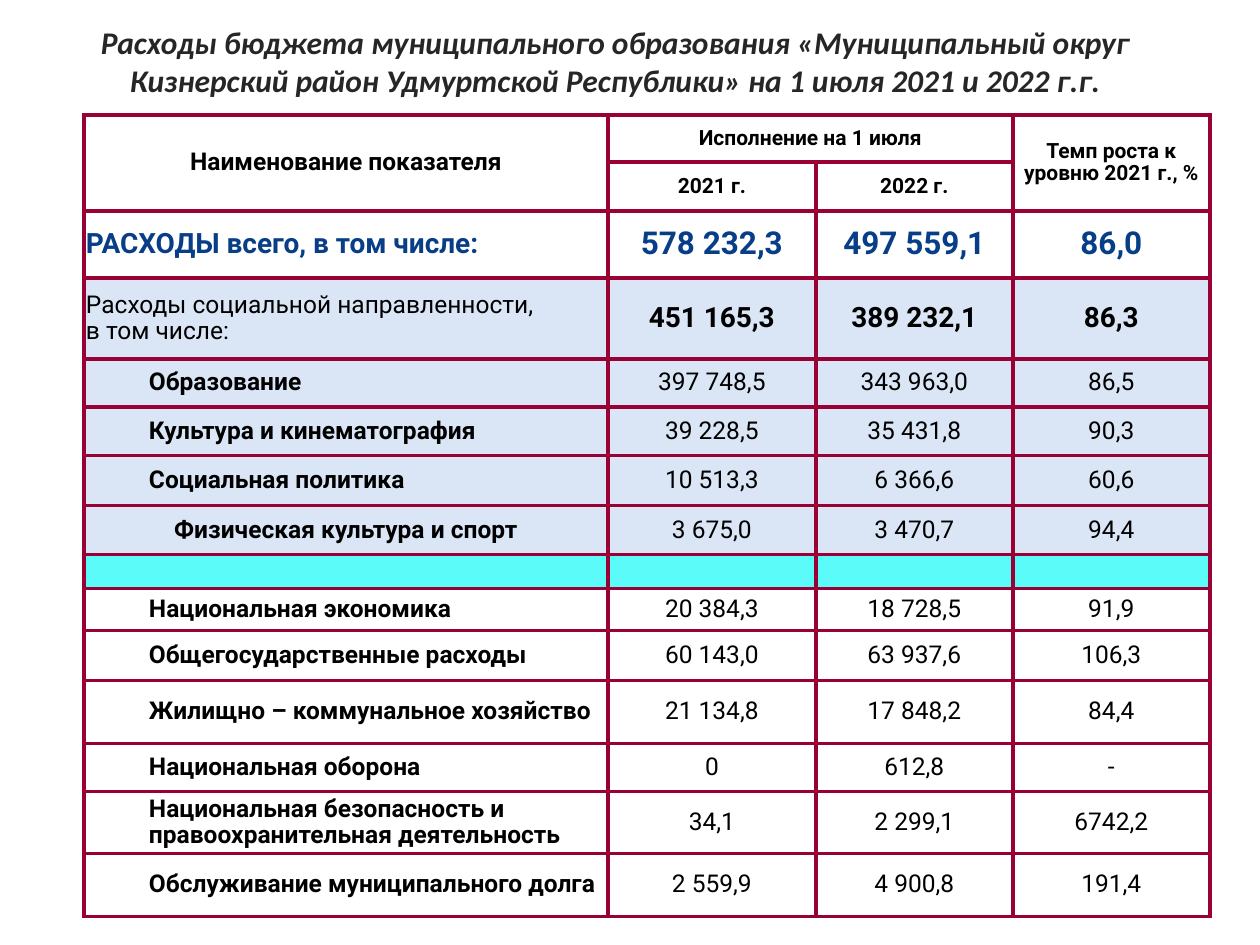
from dataclasses import dataclass

from lxml import etree
from pptx import Presentation
from pptx.dml.color import RGBColor
from pptx.enum.text import MSO_ANCHOR, MSO_AUTO_SIZE, PP_ALIGN
from pptx.oxml.ns import qn
from pptx.util import Pt

LEFT, CENTER = PP_ALIGN.LEFT, PP_ALIGN.CENTER
TOP, MIDDLE = MSO_ANCHOR.TOP, MSO_ANCHOR.MIDDLE
PX = 914400 // 126
TITLE_ONLY = 5


@dataclass(frozen=True)
class Theme:
    title_font: str = "Calibri"
    table_font: str = "Roboto"
    ink: str = "000000"
    title: str = "262626"
    total: str = "073E87"
    border: str = "990033"
    plain: str = "FFFFFF"
    social: str = "DAE6F6"
    divider: str = "5AFBF8"
    small: int = 12
    body: int = 14
    strong: int = 16
    large: int = 18
    border_width: float = 2.25


theme = Theme()


def write(frame, text, *, size=theme.body, color=theme.ink, font=theme.table_font,
          bold=False, italic=False, align=CENTER, indent=0, spacing=0.9):
    """Fill a text frame, one paragraph per line of text."""
    for index, line in enumerate(text.split("\n")):
        para = frame.paragraphs[0] if index == 0 else frame.add_paragraph()
        para.alignment = align
        para.line_spacing = spacing
        if indent:
            para.level = 1
            properties = para._p.get_or_add_pPr()
            properties.set("marL", str(indent * PX))
            properties.set("indent", "0")
        span = para.add_run()
        span.text = line
        span.font.name = font
        span.font.size = Pt(size)
        span.font.bold = bold
        span.font.italic = italic
        span.font.color.rgb = RGBColor.from_string(color)


def style_cell(cell, fill):
    """Set the cell's insets, borders and fill."""
    cell.margin_left = cell.margin_right = 2 * PX
    cell.margin_top = cell.margin_bottom = 2 * PX
    cell.vertical_anchor = MIDDLE
    properties = cell._tc.get_or_add_tcPr()
    for side in ("lnL", "lnR", "lnT", "lnB"):
        line = etree.SubElement(properties, qn(f"a:{side}"), w=str(Pt(theme.border_width)))
        solid = etree.SubElement(line, qn("a:solidFill"))
        etree.SubElement(solid, qn("a:srgbClr"), val=theme.border)
    cell.fill.solid()
    cell.fill.fore_color.rgb = RGBColor.from_string(fill)


deck = Presentation()
deck.slide_width, deck.slide_height = 1260 * PX, 945 * PX
page = deck.slides.add_slide(deck.slide_layouts[TITLE_ONLY])

# Title
title = page.shapes.title
title.left, title.top, title.width, title.height = 20 * PX, 17 * PX, 1191 * PX, 89 * PX
title.text_frame.auto_size = MSO_AUTO_SIZE.NONE
title.text_frame.vertical_anchor = TOP
title.text_frame.word_wrap = True
write(title.text_frame,
      "Расходы бюджета муниципального образования «Муниципальный округ "
      "Кизнерский район Удмуртской Республики» на 1 июля 2021 и 2022 г.г.",
      size=theme.large, color=theme.title, font=theme.title_font,
      bold=True, italic=True, spacing=1.0)

# Table contents: header cells, then rows of height, fill, name and figures
header_heights = [47, 49]
header_cells = [
    (0, 0, "Наименование показателя", theme.body),
    (0, 1, "Исполнение на 1 июля", theme.small),
    (0, 3, "Темп роста к уровню 2021 г., %", theme.small),
    (1, 1, "2021 г.", theme.small),
    (1, 2, "2022 г.", theme.small),
]
TOTAL = "РАСХОДЫ всего, в том числе:"
SOCIAL = "Расходы социальной направленности,\nв том числе:"
SPORT = "Физическая культура и спорт"
budget_rows = [
    (67, theme.plain, TOTAL, "578 232,3", "497 559,1", "86,0"),
    (81, theme.social, SOCIAL, "451 165,3", "389 232,1", "86,3"),
    (48, theme.social, "Образование", "397 748,5", "343 963,0", "86,5"),
    (49, theme.social, "Культура и кинематография", "39 228,5", "35 431,8", "90,3"),
    (50, theme.social, "Социальная политика", "10 513,3", "6 366,6", "60,6"),
    (49, theme.social, SPORT, "3 675,0", "3 470,7", "94,4"),
    (34, theme.divider, "", "", "", ""),
    (42, theme.plain, "Национальная экономика", "20 384,3", "18 728,5", "91,9"),
    (50, theme.plain, "Общегосударственные расходы", "60 143,0", "63 937,6", "106,3"),
    (63, theme.plain, "Жилищно – коммунальное хозяйство", "21 134,8", "17 848,2", "84,4"),
    (48, theme.plain, "Национальная оборона", "0", "612,8", "-"),
    (62, theme.plain, "Национальная безопасность и правоохранительная деятельность",
     "34,1", "2 299,1", "6742,2"),
    (63, theme.plain, "Обслуживание муниципального долга", "2 559,9", "4 900,8", "191,4"),
]
name_formats = {
    TOTAL: dict(size=theme.strong, color=theme.total, bold=True, align=LEFT),
    SOCIAL: dict(align=LEFT),
    SPORT: dict(bold=True),
}
item_format = dict(bold=True, align=LEFT, indent=63)
figure_formats = {
    TOTAL: dict(size=theme.large, color=theme.total, bold=True),
    SOCIAL: dict(size=theme.strong, bold=True),
}

# Table grid
column_widths = [524, 208, 197, 197]
row_heights = header_heights + [row[0] for row in budget_rows]
row_fills = [theme.plain] * len(header_heights) + [row[1] for row in budget_rows]
table = page.shapes.add_table(
    len(row_heights), len(column_widths), 84 * PX, 115 * PX,
    sum(column_widths) * PX, sum(row_heights) * PX).table
table.first_row = table.horz_banding = False
for column, width in zip(table.columns, column_widths):
    column.width = width * PX
for row, height, fill in zip(table.rows, row_heights, row_fills):
    row.height = height * PX
    for cell in row.cells:
        style_cell(cell, fill)

# Header
for first, last in (((0, 0), (1, 0)), ((0, 1), (0, 2)), ((0, 3), (1, 3))):
    table.cell(*first).merge(table.cell(*last))
for row, column, text, size in header_cells:
    write(table.cell(row, column).text_frame, text, size=size, bold=True)

# Body
for row, (_, _, name, *figures) in enumerate(budget_rows, start=len(header_heights)):
    if not name:
        for cell in table.rows[row].cells:
            etree.SubElement(cell.text_frame.paragraphs[0]._p, qn("a:endParaRPr"),
                             sz=str(theme.small * 100))
        continue
    write(table.cell(row, 0).text_frame, name, **name_formats.get(name, item_format))
    for column, figure in enumerate(figures, start=1):
        write(table.cell(row, column).text_frame, figure, **figure_formats.get(name, {}))

deck.save("out.pptx")
